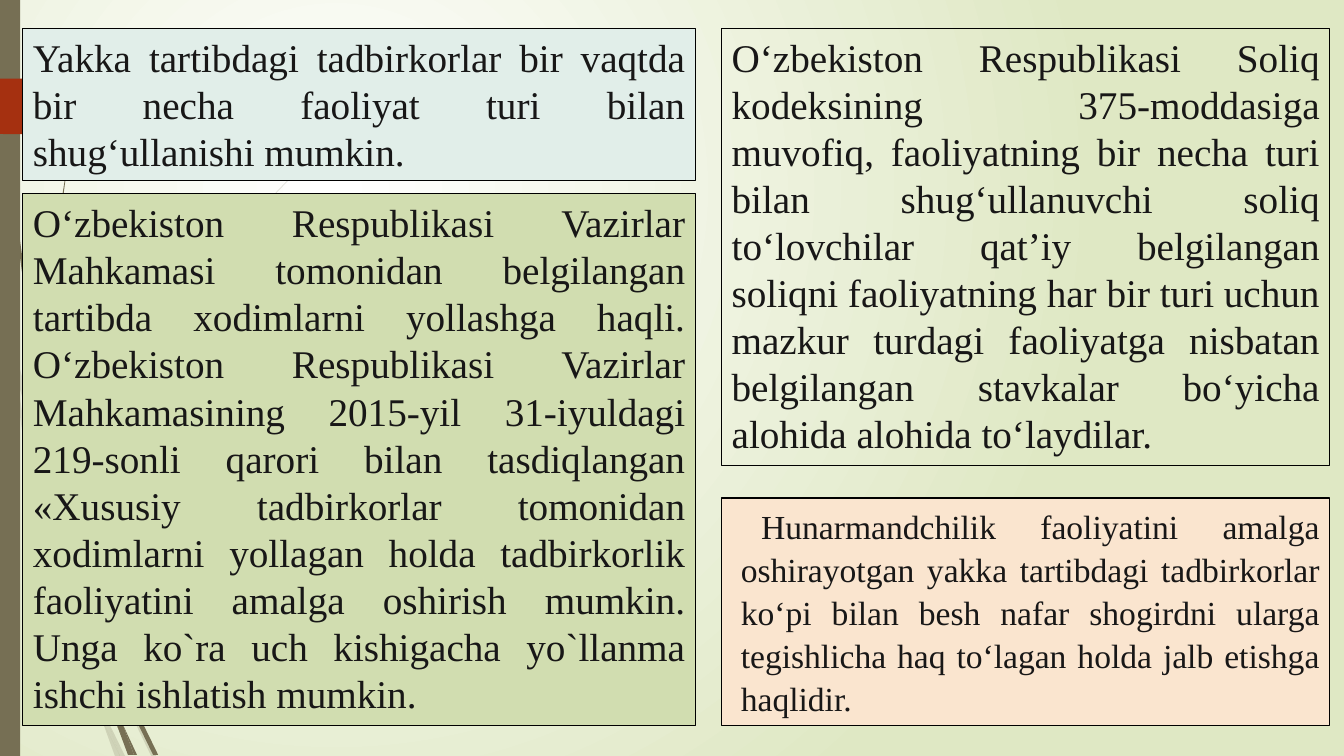
from lxml import etree
from pptx import Presentation
from pptx.dml.color import RGBColor
from pptx.enum.shapes import MSO_SHAPE as Preset
from pptx.enum.text import MSO_ANCHOR as Anchor, MSO_AUTO_SIZE as AutoSize, PP_ALIGN as Align
from pptx.oxml.ns import qn
from pptx.util import Cm, Pt

COLORS = {
    "white": "FFFFFF", "edge": "DFE8C4", "olive": "766F54", "red": "A53010",
    "mint": "E1EEE9", "green": "D1DDB0", "peach": "FAE5CF",
    "ink": "181717", "border": "000000",
}
FONT = "Times New Roman"
SLIDE_W, SLIDE_H = 33.87, 19.05
UNIT = Cm(0.0254)  # outline points are counted in this unit

# Outlines of the grass blades behind the text
PALE_BLADES = [
    [(58, 522), (84, 599), (85, 586), (62, 520), (14, 345), (17, 376)],
    [(92, 607), (88, 596), (88, 610), (123, 694), (150, 750), (155, 750), (127, 692)],
    [(119, 750), (124, 750), (105, 711)],
    [(93, 683), (70, 619), (31, 469), (17, 376), (11, 350), (28, 470), (65, 621),
     (92, 693), (101, 714), (99, 707)],
    [(88, 584), (110, 462), (160, 349), (229, 245), (268, 198), (290, 175), (312, 154),
     (312, 153), (289, 175), (268, 197), (228, 244), (158, 348), (107, 461), (85, 584),
     (85, 586), (88, 596)],
    [(101, 714), (114, 750), (119, 750)],
    [(96, 692), (93, 683), (99, 707), (101, 714), (119, 750), (105, 711)],
]
DARK_BLADES = [
    [(7, 110), (17, 233), (33, 355), (56, 477), (57, 481), (55, 457), (55, 453), (36, 355),
     (19, 232), (8, 109), (5, 48), (4, 0), (3, 0), (4, 48)],
    [(113, 649), (110, 641), (111, 656), (132, 708), (152, 749), (157, 749), (136, 706)],
    [(110, 691), (98, 657), (72, 556), (64, 505), (57, 477), (68, 557), (93, 659),
     (111, 708), (117, 722), (116, 717)],
    [(60, 472), (58, 453), (54, 349), (58, 245), (63, 193), (70, 141), (62, 193),
     (56, 245), (52, 349), (55, 449)],
    [(133, 749), (136, 749), (122, 719)],
    [(117, 722), (127, 749), (131, 749)],
    [(106, 645), (110, 691), (116, 706), (122, 719), (121, 716), (111, 656), (109, 651)],
    [(116, 706), (110, 691), (116, 717), (117, 722), (130, 749), (133, 749), (122, 719)],
]
TAG = [(0, 78), (146, 78), (148, 79), (173, 104), (174, 106), (173, 108),
       (148, 133), (146, 134), (0, 133)]

ACTIVITIES = "Yakka tartibdagi tadbirkorlar bir vaqtda bir necha faoliyat turi bilan shug‘ullanishi mumkin."
HIRING = (
    "O‘zbekiston Respublikasi Vazirlar Mahkamasi tomonidan belgilangan tartibda xodimlarni "
    "yollashga haqli. O‘zbekiston Respublikasi Vazirlar Mahkamasining 2015-yil 31-iyuldagi "
    "219-sonli qarori bilan tasdiqlangan «Xususiy tadbirkorlar tomonidan xodimlarni yollagan "
    "holda tadbirkorlik faoliyatini amalga oshirish mumkin. Unga ko`ra uch kishigacha "
    "yo`llanma ishchi ishlatish mumkin."
)
TAXES = (
    "O‘zbekiston Respublikasi Soliq kodeksining 375-moddasiga muvofiq, faoliyatning bir necha "
    "turi bilan shug‘ullanuvchi soliq to‘lovchilar qat’iy belgilangan soliqni faoliyatning har "
    "bir turi uchun mazkur turdagi faoliyatga nisbatan belgilangan stavkalar bo‘yicha alohida "
    "alohida to‘laydilar."
)
CRAFTS = (
    "Hunarmandchilik faoliyatini amalga oshirayotgan yakka tartibdagi tadbirkorlar ko‘pi bilan "
    "besh nafar shogirdni ularga tegishlicha haq to‘lagan holda jalb etishga haqlidir."
)


def rgb(name):
    return RGBColor.from_string(COLORS[name])


def paint(shape, color, alpha=None):
    shape.shadow.inherit = False
    shape.fill.solid()
    shape.fill.fore_color.rgb = rgb(color)
    shape.line.fill.background()
    if alpha is not None:
        tint = next(shape._element.spPr.iter(qn("a:srgbClr")))
        etree.SubElement(tint, qn("a:alpha"), val=str(alpha * 1000))


def draw_outline(shapes, points, color, alpha=None):
    outline = shapes.build_freeform(*points[0], scale=UNIT)
    outline.add_line_segments(points[1:], close=True)
    paint(outline.convert_to_shape(), color, alpha)


def set_background(slide):
    fill = slide.background.fill
    fill.gradient()
    for stop, color, position in zip(fill.gradient_stops, ("white", "edge"), (0, 1)):
        stop.color.rgb = rgb(color)
        stop.position = position
    gradient = next(slide._element.iter(qn("a:gradFill")))
    linear = gradient.find(qn("a:lin"))
    circle = etree.Element(qn("a:path"), attrib={"path": "circle"})
    etree.SubElement(circle, qn("a:fillToRect"), l="50000", t="50000", r="100000", b="100000")
    gradient.replace(linear, circle)


def draw_left_edge(slide, width, height):
    # Grass blades
    for blades, alpha in ((PALE_BLADES, 20), (DARK_BLADES, None)):
        tuft = slide.shapes.add_group_shape()
        for blade in blades:
            draw_outline(tuft.shapes, blade, "olive", alpha)
    # Strip and tag
    strip = slide.shapes.add_shape(Preset.RECTANGLE, 0, 0, Cm(width), Cm(height))
    paint(strip, "olive")
    draw_outline(slide.shapes, TAG, "red")


def add_panel(slide, box, text, fill=None, size=28):
    panel = slide.shapes.add_textbox(*(Cm(length) for length in box))
    if fill:
        panel.fill.solid()
        panel.fill.fore_color.rgb = rgb(fill)
    panel.line.color.rgb = rgb("border")
    panel.line.width = Pt(0.75)
    frame = panel.text_frame
    frame.word_wrap = True
    frame.auto_size = AutoSize.SHAPE_TO_FIT_TEXT
    frame.vertical_anchor = Anchor.TOP
    paragraph = frame.paragraphs[0]
    paragraph.alignment = Align.JUSTIFY
    run = paragraph.add_run()
    run.text = text
    run.font.size = Pt(size)
    run.font.name = FONT
    run.font.color.rgb = rgb("ink")
    return paragraph


def add_left_column(slide, left, top, width):
    add_panel(slide, (left, top, width, 3.84), ACTIVITIES, "mint")
    add_panel(slide, (left, top + 4.17, width, 13.41), HIRING, "green")


def add_right_column(slide, left, top, width):
    crafts = add_panel(slide, (left, top + 11.84, width, 5.74), CRAFTS, "peach", 24)
    crafts.line_spacing = 1.07
    crafts.space_after = Pt(1.9)
    indents = crafts._p.get_or_add_pPr()
    indents.set("marL", str(Cm(0.23)))
    indents.set("indent", str(Cm(0.51)))
    add_panel(slide, (left, top, width, 11.02), TAXES)


def main():
    deck = Presentation()
    deck.slide_width, deck.slide_height = Cm(SLIDE_W), Cm(SLIDE_H)
    slide = deck.slides.add_slide(deck.slide_layouts[6])
    set_background(slide)
    draw_left_edge(slide, 0.51, SLIDE_H)
    add_left_column(slide, 0.58, 0.71, 16.94)
    add_right_column(slide, 18.19, 0.71, 15.32)
    deck.save("out.pptx")


if __name__ == "__main__":
    main()
